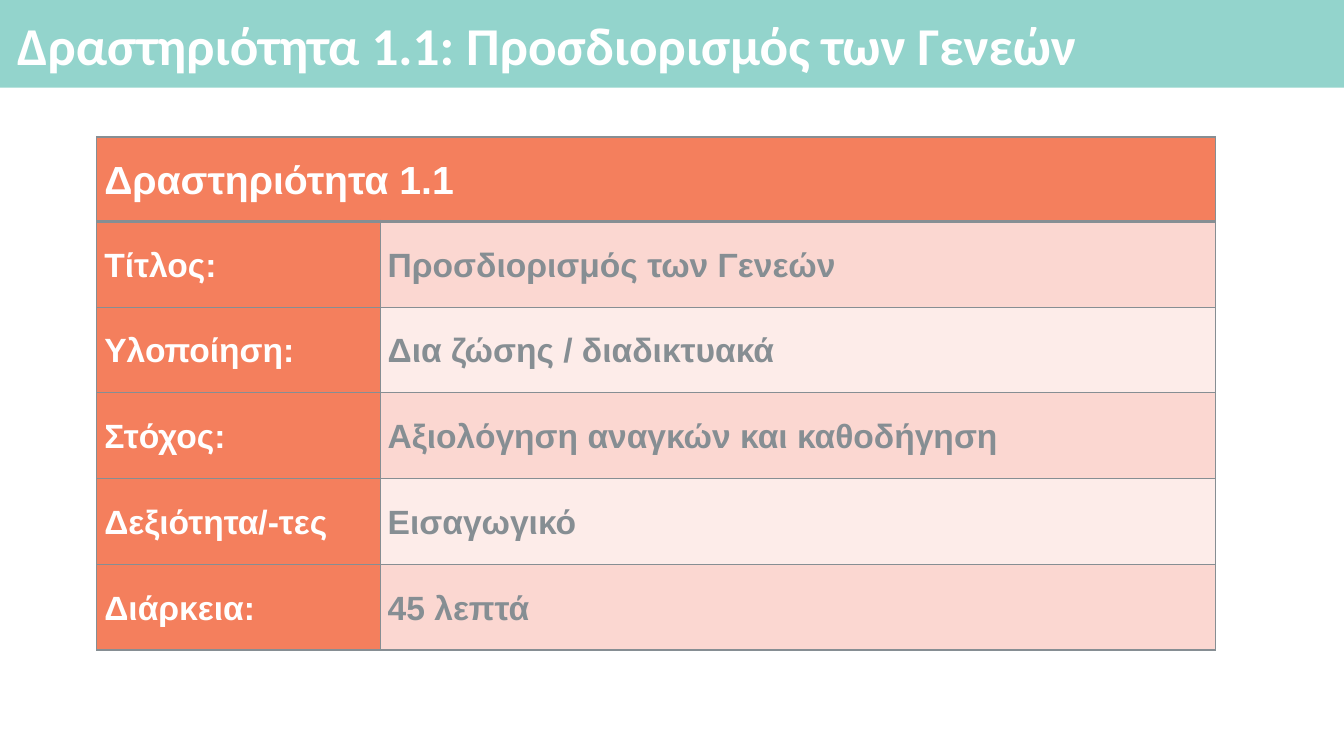
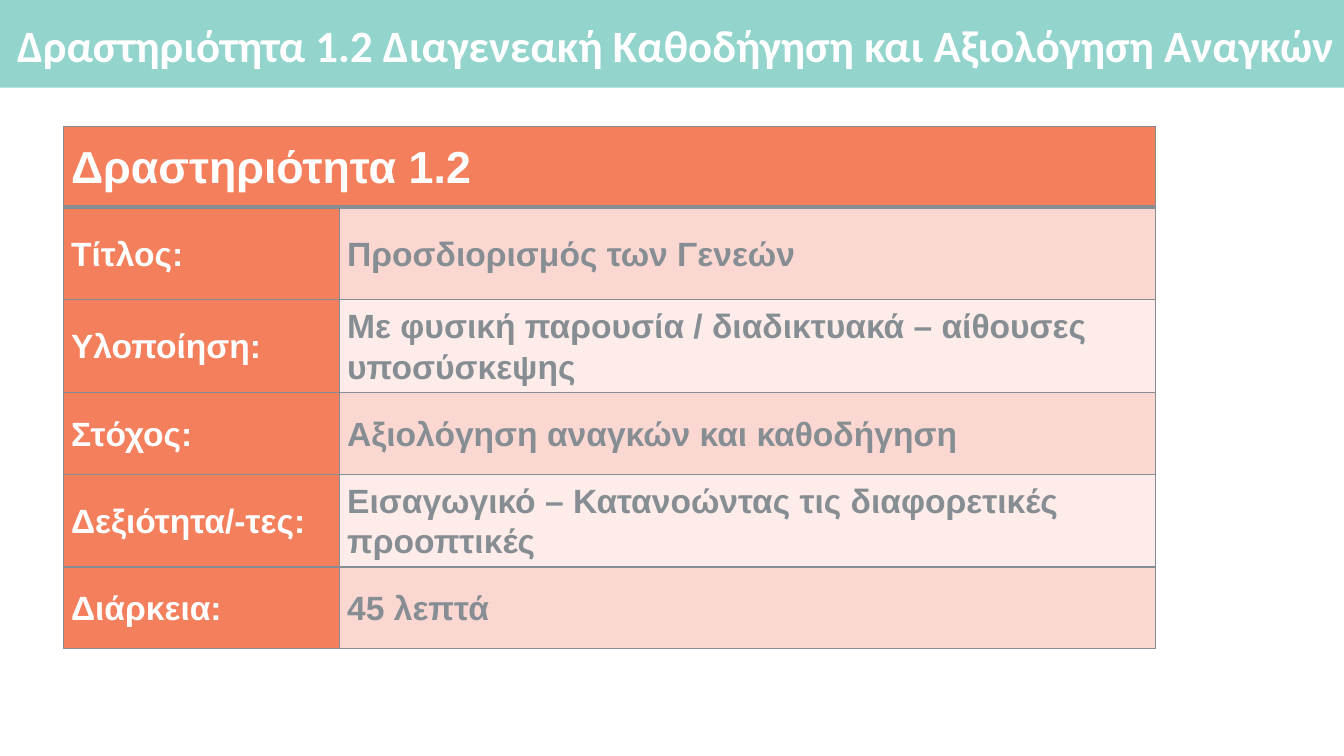
from lxml.etree import SubElement
from pptx import Presentation
from pptx.dml.color import RGBColor
from pptx.enum.shapes import MSO_SHAPE
from pptx.enum.text import MSO_ANCHOR, PP_ALIGN
from pptx.oxml.ns import qn
from pptx.util import Cm, Pt

COLOURS = {
    "band": "93D4CC",
    "label": "F47F5D",
    "odd": "FBD7D1",
    "even": "FDECE9",
    "grey": "868E93",
    "white": "FFFFFF",
}


def colour(name):
    return RGBColor.from_string(COLOURS[name])


def write(frame, text, size, ink="white", font="Arial", spacing=1.07):
    para = frame.paragraphs[0]
    para.alignment = PP_ALIGN.LEFT
    para.line_spacing = spacing
    span = para.add_run()
    span.text = text
    span.font.name = font
    span.font.size = Pt(size)
    span.font.bold = True
    span.font.color.rgb = colour(ink)


class ActivityDeck:
    def __init__(self):
        self.deck = Presentation()
        self.deck.slide_width = Cm(33.87)
        self.deck.slide_height = Cm(19.05)
        self.page = None

    def add_page(self, title, size):
        self.page = self.deck.slides.add_slide(self.deck.slide_layouts[6])
        self.add_band()
        self.add_title(title, size)

    def add_band(self):
        band = self.page.shapes.add_shape(
            MSO_SHAPE.RECTANGLE, 0, 0, self.deck.slide_width, Cm(2.21))
        band.shadow.inherit = False
        band.fill.solid()
        band.fill.fore_color.rgb = colour("band")
        band.line.fill.background()

    def add_title(self, text, size):
        box = self.page.shapes.add_textbox(Cm(0.28), Cm(0.23), Cm(33.55), Cm(1.98))
        frame = box.text_frame
        frame.word_wrap = True
        frame.vertical_anchor = MSO_ANCHOR.MIDDLE
        frame.margin_left = frame.margin_top = frame.margin_bottom = Cm(0.15)
        frame.margin_right = 0
        write(frame, text, size, font="Calibri", spacing=0.9)

    def add_borders(self, cell, top, bottom):
        properties = cell._tc.get_or_add_tcPr()
        for side, width in (("L", 1), ("R", 1), ("T", top), ("B", bottom)):
            line = SubElement(properties, qn(f"a:ln{side}"), w=str(Pt(width)))
            fill = SubElement(line, qn("a:solidFill"))
            SubElement(fill, qn("a:srgbClr"), val=COLOURS["grey"])

    def style_cell(self, cell, fill, row):
        cell.margin_left = cell.margin_right = Cm(0.19)
        cell.margin_top = cell.margin_bottom = 0
        cell.vertical_anchor = MSO_ANCHOR.MIDDLE
        self.add_borders(cell, 3 if row == 1 else 1, 3 if row == 0 else 1)
        cell.fill.solid()
        cell.fill.fore_color.rgb = colour(fill)

    def add_table(self, left, top, widths, heights, heading, heading_size, entries):
        table = self.page.shapes.add_table(
            len(heights), len(widths), Cm(left), Cm(top),
            Cm(sum(widths)), Cm(sum(heights))).table
        for column, width in zip(table.columns, widths):
            column.width = Cm(width)
        for row, height in zip(table.rows, heights):
            row.height = Cm(height)
        table.cell(0, 0).merge(table.cell(0, 1))
        for cell in table.rows[0].cells:
            self.style_cell(cell, "label", 0)
        write(table.cell(0, 0).text_frame, heading, heading_size)
        for row, (label, value) in enumerate(entries, 1):
            label_cell, value_cell = table.rows[row].cells
            self.style_cell(label_cell, "label", row)
            self.style_cell(value_cell, "odd" if row % 2 else "even", row)
            write(label_cell.text_frame, label, 24)
            write(value_cell.text_frame, value, 24, ink="grey")

    def save(self):
        self.deck.save("out.pptx")


def main():
    activities = ActivityDeck()

    activities.add_page("Δραστηριότητα 1.1: Προσδιορισμός των Γενεών", 38)
    activities.add_table(
        2.44, 3.45, [7.14, 21.06], [2.13] + [2.16] * 5, "Δραστηριότητα 1.1", 28,
        [("Τίτλος:", "Προσδιορισμός των Γενεών"),
         ("Υλοποίηση:", "Δια ζώσης / διαδικτυακά"),
         ("Στόχος:", "Αξιολόγηση αναγκών και καθοδήγηση"),
         ("Δεξιότητα/-τες", "Εισαγωγικό"),
         ("Διάρκεια:", "45 λεπτά")])

    activities.add_page(
        "Δραστηριότητα 1.2 Διαγενεακή Καθοδήγηση και Αξιολόγηση Αναγκών", 32)
    activities.add_table(
        1.6, 3.18, [6.96, 20.55], [2.03, 2.34, 2.34, 2.06, 2.34, 2.06],
        "Δραστηριότητα 1.2", 32,
        [("Τίτλος:", "Προσδιορισμός των Γενεών"),
         ("Υλοποίηση:", "Με φυσική παρουσία / διαδικτυακά – αίθουσες υποσύσκεψης"),
         ("Στόχος:", "Αξιολόγηση αναγκών και καθοδήγηση"),
         ("Δεξιότητα/-τες:", "Εισαγωγικό – Κατανοώντας τις διαφορετικές προοπτικές"),
         ("Διάρκεια:", "45 λεπτά")])

    activities.save()


if __name__ == "__main__":
    main()
